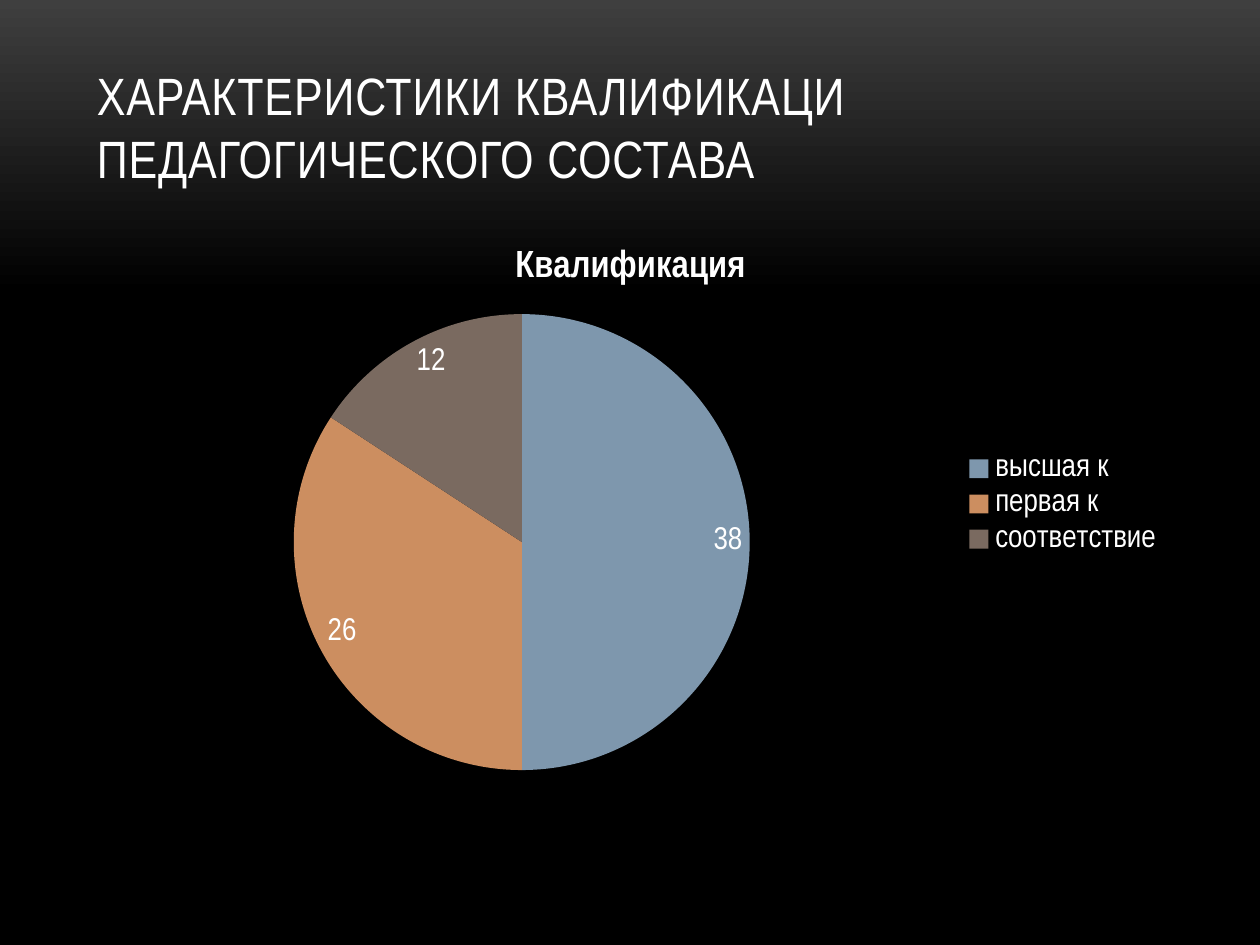
from pptx import Presentation
from pptx.chart.data import CategoryChartData
from pptx.dml.color import RGBColor
from pptx.enum.chart import XL_CHART_TYPE as ChartType
from pptx.enum.chart import XL_LABEL_POSITION as LabelPosition
from pptx.enum.chart import XL_LEGEND_POSITION as LegendPosition
from pptx.enum.text import MSO_ANCHOR as Anchor
from pptx.util import Inches, Pt

FONT = "Arial Narrow"
WHITE = RGBColor(0xFF, 0xFF, 0xFF)
BLACK = RGBColor(0x00, 0x00, 0x00)
CHARCOAL = RGBColor(0x3F, 0x3F, 0x3F)
BLUE = RGBColor(0x7E, 0x97, 0xAD)
ORANGE = RGBColor(0xCC, 0x8E, 0x60)
BROWN = RGBColor(0x7A, 0x6A, 0x60)

LEFT, WIDTH = Inches(0.67), Inches(8.67)
QUALIFICATIONS = [
    ("высшая к", 38, BLUE),
    ("первая к", 26, ORANGE),
    ("соответствие", 12, BROWN),
]


def style_font(font, size, bold=False):
    font.name = FONT
    font.size = Pt(size)
    font.bold = bold
    font.color.rgb = WHITE


def set_background(slide):
    """Fade from charcoal at the top to black at 31 % of the height."""
    fill = slide.background.fill
    fill.gradient()
    fill.gradient_angle = 270
    for stop, position, color in zip(fill.gradient_stops, (0, 0.31), (CHARCOAL, BLACK)):
        stop.position = position
        stop.color.rgb = color


def add_heading(slide, text):
    box = slide.shapes.add_textbox(LEFT, Inches(0.3), WIDTH, Inches(1.25))
    text_frame = box.text_frame
    text_frame.word_wrap = True
    text_frame.vertical_anchor = Anchor.BOTTOM
    text_frame.text = text
    run = text_frame.paragraphs[0].runs[0]
    style_font(run.font, 30)
    run.font._element.set("spc", "50")


def add_pie(slide, title, rows):
    data = CategoryChartData()
    data.categories = [name for name, _, _ in rows]
    data.add_series(title, [value for _, value, _ in rows])
    chart = slide.shapes.add_chart(
        ChartType.PIE, LEFT, Inches(1.75), WIDTH, Inches(4.5), data
    ).chart
    style_font(chart.font, 18)

    chart.has_title = True
    title_frame = chart.chart_title.text_frame
    title_frame.text = title
    style_font(title_frame.paragraphs[0].runs[0].font, 21.6, bold=True)
    chart.chart_title.include_in_layout = False

    chart.has_legend = True
    chart.legend.position = LegendPosition.RIGHT
    chart.legend.include_in_layout = False

    plot = chart.plots[0]
    plot.vary_by_categories = True
    plot.has_data_labels = True
    labels = plot.data_labels
    labels.show_value = True
    labels.show_percentage = False
    labels.position = LabelPosition.INSIDE_END
    style_font(labels.font, 18)
    for index, (_, _, color) in enumerate(rows):
        fill = plot.series[0].points[index].format.fill
        fill.solid()
        fill.fore_color.rgb = color


def main():
    presentation = Presentation()
    presentation.slide_width = Inches(10)
    presentation.slide_height = Inches(7.5)
    slide = presentation.slides.add_slide(presentation.slide_layouts[6])
    set_background(slide)
    add_heading(slide, "ХАРАКТЕРИСТИКИ КВАЛИФИКАЦИ ПЕДАГОГИЧЕСКОГО СОСТАВА")
    add_pie(slide, "Квалификация", QUALIFICATIONS)
    presentation.save("out.pptx")


if __name__ == "__main__":
    main()
